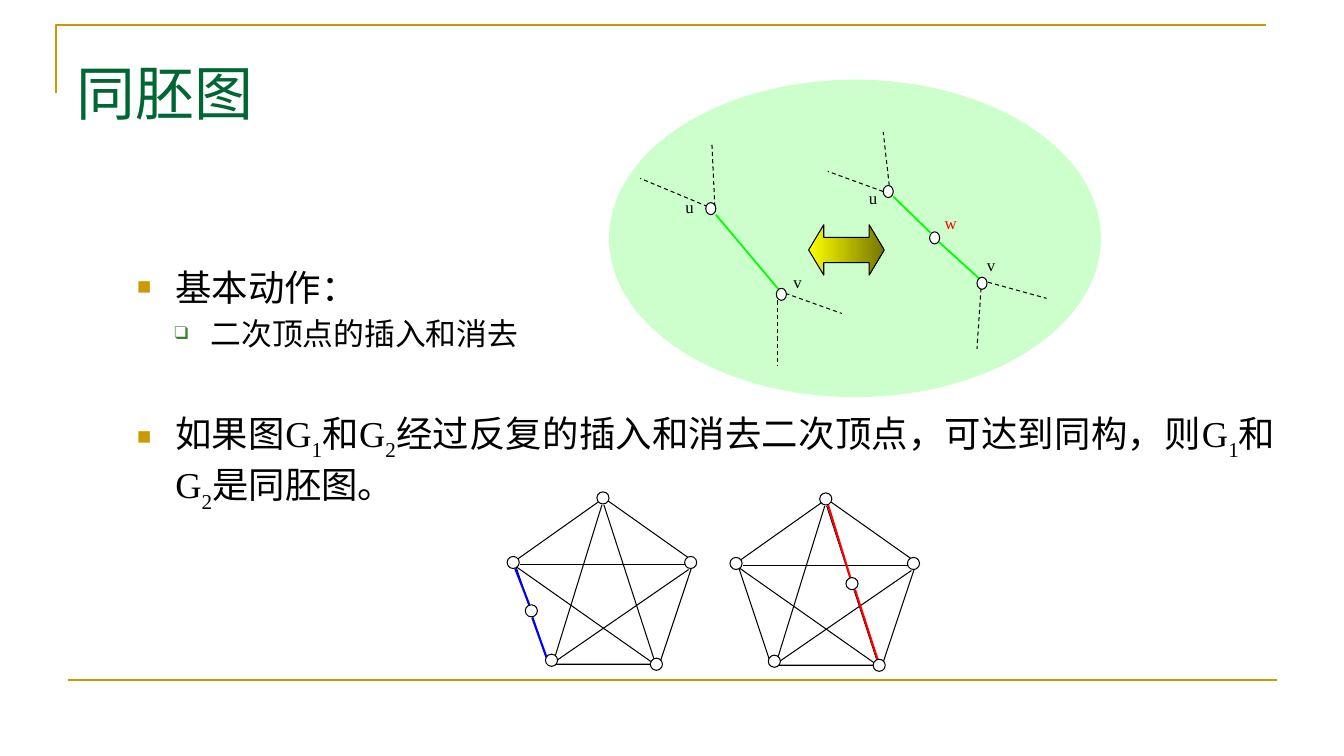
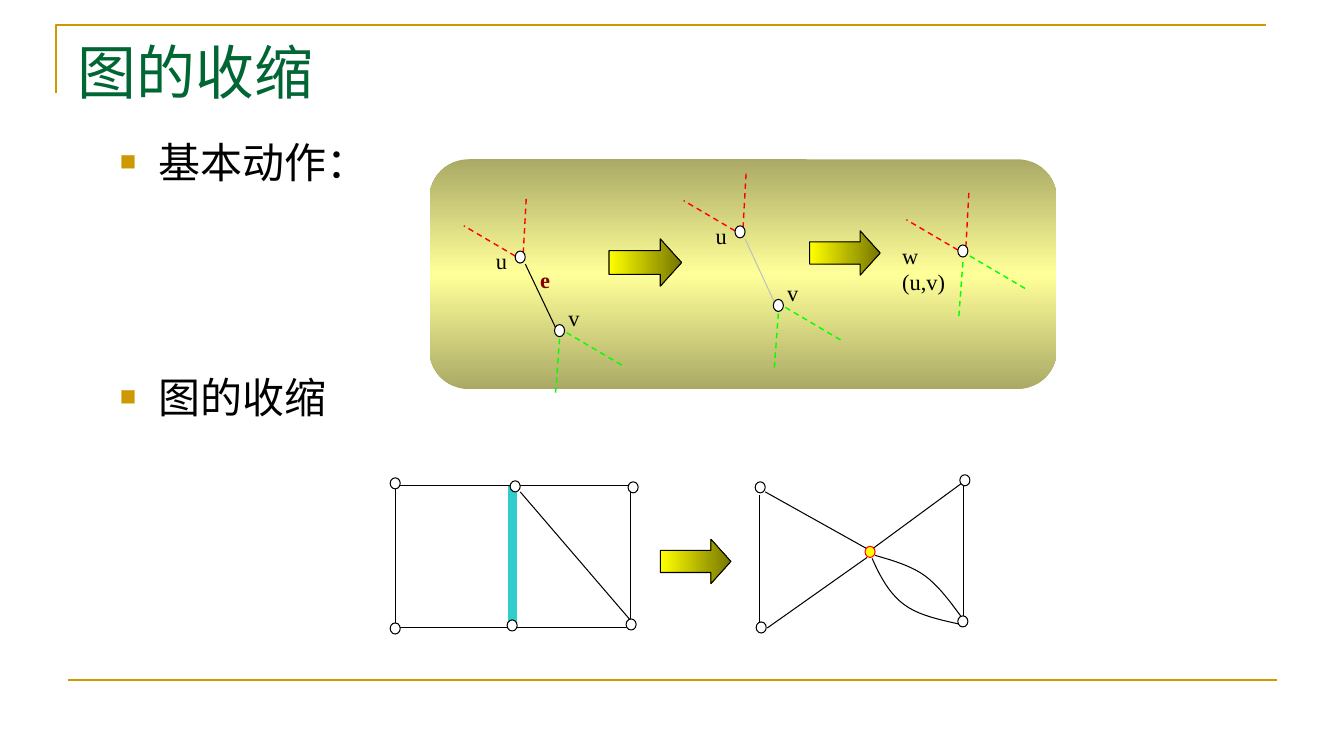
from copy import deepcopy

from lxml.etree import SubElement
from pptx import Presentation
from pptx.dml.color import RGBColor
from pptx.enum.dml import MSO_LINE
from pptx.enum.shapes import MSO_CONNECTOR, MSO_SHAPE
from pptx.enum.text import MSO_ANCHOR, MSO_AUTO_SIZE, PP_ALIGN
from pptx.oxml.ns import qn
from pptx.util import Inches, Pt

FONT = "Times New Roman"
BLACK, WHITE, RED, LIME, BLUE = "000000", "FFFFFF", "FF0000", "00FF00", "0000FF"
GOLD, GREEN = "CC9900", "006633"
ARROW_GRADIENT = ("FFFF00", "767600")
BULLETS = [("■", GOLD, 65, 0.38, 0.38), ("❑", "3B812F", 60, 0.73, 0.36)]


def write(paragraph, text, size, color=BLACK, bold=False, baseline=0):
    run = paragraph.add_run()
    run.text = text
    run.font.name = FONT
    run.font.size = Pt(size)
    run.font.bold = bold
    run.font.color.rgb = RGBColor.from_string(color)
    if baseline:
        run.font._element.set("baseline", str(baseline * 1000))


def paint(shape, fill=None, line=None, width=0.75, dash=False):
    properties = shape.element.spPr
    if isinstance(fill, tuple):
        shape.fill.gradient()
        stops = properties.find(qn("a:gradFill")).find(qn("a:gsLst"))
        for _ in fill[2:]:
            stops.append(deepcopy(stops[-1]))
        for i, (stop, color) in enumerate(zip(shape.fill.gradient_stops, fill)):
            stop.color.rgb = RGBColor.from_string(color)
            stop.position = i / (len(fill) - 1)
        shape.fill.gradient_angle = 0 if len(fill) == 2 else 90
    elif fill:
        shape.fill.solid()
        shape.fill.fore_color.rgb = RGBColor.from_string(fill)
    elif hasattr(shape, "fill"):
        shape.fill.background()
    if line:
        shape.line.color.rgb = RGBColor.from_string(line)
        shape.line.width = Pt(width)
        if dash:
            shape.line.dash_style = MSO_LINE.DASH
    else:
        shape.line.fill.background()
    SubElement(properties, qn("a:effectLst"))


prs = Presentation()
prs.slide_width, prs.slide_height = Inches(13.33), Inches(7.5)
layout = prs.slide_layouts[1]
homeomorphism = prs.slides.add_slide(layout)
contraction = prs.slides.add_slide(layout)

builder = homeomorphism.shapes.build_freeform(Inches(0.56), Inches(0.92), scale=1)
builder.add_line_segments([(Inches(0.56), Inches(0.25)), (Inches(12.56), Inches(0.25))], close=False)
corner = builder.convert_to_shape()
footer_rule = homeomorphism.shapes.add_connector(
    MSO_CONNECTOR.STRAIGHT, Inches(0.67), Inches(6.75), Inches(12.67), Inches(6.75))
for rule in (corner, footer_rule):
    paint(rule, line=GOLD, width=1.5)
    layout.shapes.element.append(rule.element)

contents = [
    (homeomorphism, "同胚图", (0.66, 0.51, 8.67, 1.25), (1.26, 2.58, 11.49, 4.65), PP_ALIGN.JUSTIFY, [
        (0, 26, 5.2, ["基本动作："]),
        (1, 22, 4.4, ["二次顶点的插入和消去"]),
        (0, 26, 42, ["如果图G", "1", "和G", "2", "经过反复的插入和消去二次顶点，可达到同构，则G",
                     "1", "和G", "2", "是同胚图。"]),
    ]),
    (contraction, "图的收缩", (0.67, 0.3, 12, 1.25), (1.09, 1.3, 8.41, 4.07), PP_ALIGN.LEFT, [
        (0, 30, 6, ["基本动作："]),
        (0, 30, 132, ["图的收缩"]),
    ]),
]
for slide, heading, title_box, body_box, alignment, points in contents:
    title, body = slide.placeholders
    for holder, box in ((title, title_box), (body, body_box)):
        holder.left, holder.top, holder.width, holder.height = map(Inches, box)
        holder.text_frame.auto_size = MSO_AUTO_SIZE.NONE
        holder.text_frame.vertical_anchor = MSO_ANCHOR.TOP
    title.text_frame.paragraphs[0].alignment = PP_ALIGN.LEFT
    write(title.text_frame.paragraphs[0], heading, 42, GREEN)
    for i, (level, size, space, pieces) in enumerate(points):
        point = body.text_frame.add_paragraph() if i else body.text_frame.paragraphs[0]
        point.level = level
        point.alignment = alignment
        point.space_before = Pt(space)
        mark, color, percent, margin, hanging = BULLETS[level]
        settings = point._p.get_or_add_pPr()
        settings.set("marL", str(Inches(margin)))
        settings.set("indent", str(-Inches(hanging)))
        SubElement(SubElement(settings, qn("a:buClr")), qn("a:srgbClr"), val=color)
        SubElement(settings, qn("a:buSzPct"), val=str(percent * 1000))
        SubElement(settings, qn("a:buFont"), typeface=FONT)
        SubElement(settings, qn("a:buChar"), char=mark)
        for piece in pieces:
            write(point, piece, size, baseline=-30 if piece.isdigit() else 0)

insert_nodes = [(7, 2.01), (7.7, 2.86), (9.22, 2.3), (9.69, 2.75), (8.76, 1.84)]
insert_nodes = [(x, y, 0.1, 0.12, WHITE, BLACK) for x, y in insert_nodes]
insert_edges = [(*ends, LIME, 1.25, False) for ends in (
    (7.1, 2.13, 7.73, 2.88), (8.86, 1.95, 9.23, 2.31), (9.3, 2.39, 9.73, 2.78))]
insert_edges += [(*ends, BLACK, 0.75, True) for ends in (
    (7.02, 2.05, 6.35, 1.77), (7.09, 2.05, 7.06, 1.41),
    (7.71, 2.98, 7.71, 3.63), (7.79, 2.91, 8.35, 3.11),
    (8.76, 1.9, 8.21, 1.7), (8.82, 1.84, 8.76, 1.31),
    (9.73, 2.86, 9.69, 3.46), (9.8, 2.8, 10.38, 2.96))]
insert_labels = [("u", 8.52, 1.81, BLACK), ("u", 6.7, 1.9, BLACK), ("v", 7.77, 2.65, BLACK),
                 ("v", 9.69, 2.48, BLACK), ("w", 9.27, 2.06, RED)]

corners = [(5.92, 4.88), (5.03, 5.52), (6.79, 5.52), (5.41, 6.49), (6.45, 6.53)]
diagonals = [(5.97, 5.01, 5.5, 6.53), (5.16, 5.6, 6.8, 5.6), (5.13, 5.63, 6.48, 6.58),
             (5.99, 5.01, 6.5, 6.58), (5.51, 6.56, 6.83, 5.65)]
pentagons = []
for dx, dy, inserted, color, halves in (
    (0, 0, (5.21, 6), BLUE, [(5.11, 5.64, 5.25, 6), (5.28, 6.13, 5.42, 6.52)]),
    (2.21, 0.01, (8.39, 5.73), RED, [(8.21, 5, 8.44, 5.75), (8.48, 5.85, 8.71, 6.56)]),
):
    pentagons.append((MSO_SHAPE.REGULAR_PENTAGON, (5.1 + dx, 4.94 + dy, 1.78, 1.65), WHITE, BLACK))
    vertices = [(x + dx, y + dy) for x, y in corners] + [inserted]
    insert_nodes += [(x, y, 0.12, 0.12, WHITE, BLACK) for x, y in vertices]
    insert_edges += [(a + dx, b + dy, c + dx, d + dy, BLACK, 0.75, False) for a, b, c, d in diagonals]
    insert_edges += [(*half, color, 1.5, False) for half in halves]

merge_nodes = [(x, y, 0.1, 0.11, WHITE, BLACK) for x, y in (
    (3.87, 4.74), (3.87, 6.18), (5.06, 4.77), (5.03, 6.15), (6.23, 4.78), (6.21, 6.14),
    (7.49, 4.78), (7.5, 6.17), (9.52, 4.71), (9.5, 6.11))]
merge_nodes.append((8.58, 5.42, 0.1, 0.11, "FFFF00", RED))
merge_edges = [(*ends, BLACK, 0.75, False) for ends in (
    (5.16, 4.88, 6.25, 6.15), (7.53, 4.91, 7.53, 6.18), (7.59, 4.88, 8.61, 5.45),
    (7.61, 6.23, 8.6, 5.53), (8.66, 5.44, 9.53, 4.8), (9.56, 4.8, 9.56, 6.14))]
merge_labels = [("e", 5.26, 2.59, "800000"), ("w\n(u,v)", 8.85, 2.37, BLACK)]
for ux, uy, vx, vy, link in ((5.11, 2.49, 5.5, 3.22, BLACK), (7.29, 2.24, 7.67, 2.97, "C0C0C0"),
                             (9.5, 2.43, 9.5, 2.46, None)):
    merge_edges += [
        (ux + 0.08, uy + 0.02, ux + 0.11, uy - 0.53, RED, 1, True),
        (ux, uy + 0.05, ux - 0.51, uy - 0.25, RED, 1, True),
        (vx + 0.05, vy + 0.14, vx + 0.01, vy + 0.68, LIME, 1, True),
        (vx + 0.12, vy + 0.08, vx + 0.68, vy + 0.41, LIME, 1, True)]
    merge_nodes.append((ux, uy, 0.1, 0.12, WHITE, BLACK))
    if link:
        merge_nodes.append((vx, vy, 0.1, 0.12, WHITE, BLACK))
        merge_edges.append((ux + 0.1, uy + 0.13, vx + 0.02, vy + 0.05, link, 0.75, False))
        merge_labels += [("u", ux - 0.29, uy - 0.09, BLACK), ("v", vx + 0.04, vy - 0.25, BLACK)]

insert_panels = [(MSO_SHAPE.OVAL, (6.04, 0.79, 4.88, 3.15), "CCFFCC", None), *pentagons]
insert_panels.append((MSO_SHAPE.LEFT_RIGHT_ARROW, (8.02, 2.23, 0.75, 0.5), ARROW_GRADIENT, BLACK, 0.5, 0.3))
merge_panels = [
    (MSO_SHAPE.ROUNDED_RECTANGLE, (4.26, 1.58, 6.22, 2.28), ("AAAA66", "FFFF99", "AAAA66"), None, 0.17)]
merge_panels += [(MSO_SHAPE.RIGHT_ARROW, box, ARROW_GRADIENT, BLACK, 0.5, 0.45) for box in (
    (6.04, 2.37, 0.72, 0.47), (8.03, 2.29, 0.7, 0.44), (6.55, 5.35, 0.7, 0.44))]

square = contraction.shapes.add_shape(MSO_SHAPE.RECTANGLE, *map(Inches, (3.92, 4.82, 2.33, 1.41)))
paint(square, WHITE, BLACK)
contracted = contraction.shapes.add_connector(
    MSO_CONNECTOR.STRAIGHT, *map(Inches, (5.09, 4.82, 5.09, 6.23)))
contracted.begin_connect(square, 0)
contracted.end_connect(square, 2)
paint(contracted, line="33CCCC", width=6)

parallel_edges = [
    [[(8.68, 5.51), (8.85, 5.56), (9.03, 5.61), (9.17, 5.71)],
     [(9.17, 5.71), (9.32, 5.82), (9.43, 5.98), (9.55, 6.14)]],
    [[(8.65, 5.54), (8.73, 5.72), (8.82, 5.89), (8.97, 6)],
     [(8.97, 6), (9.12, 6.11), (9.33, 6.15), (9.55, 6.2)]],
]
for arcs in parallel_edges:
    trail = []
    for arc in arcs:
        for t in [step / 10 for step in range(11)]:
            weights = ((1 - t) ** 3, 3 * t * (1 - t) ** 2, 3 * t * t * (1 - t), t ** 3)
            trail.append(tuple(Inches(sum(w * p[axis] for w, p in zip(weights, arc))) for axis in (0, 1)))
    builder = contraction.shapes.build_freeform(*trail[0], scale=1)
    builder.add_line_segments(trail[1:], close=False)
    paint(builder.convert_to_shape(), line=BLACK)

for slide, panels, edges, nodes, labels, label_size in (
    (homeomorphism, insert_panels, insert_edges, insert_nodes, insert_labels, 12),
    (contraction, merge_panels, merge_edges, merge_nodes, merge_labels, 16),
):
    for preset, box, fill, line, *adjustments in panels:
        panel = slide.shapes.add_shape(preset, *map(Inches, box))
        for i, value in enumerate(adjustments):
            panel.adjustments[i] = value
        paint(panel, fill, line)
    for *ends, color, width, dash in edges:
        edge = slide.shapes.add_connector(MSO_CONNECTOR.STRAIGHT, *map(Inches, ends))
        paint(edge, line=color, width=width, dash=dash)
    for *box, fill, line in nodes:
        paint(slide.shapes.add_shape(MSO_SHAPE.OVAL, *map(Inches, box)), fill, line)
    for text, x, y, color in labels:
        frame = slide.shapes.add_textbox(*map(Inches, (x, y, 0.73, 0.57))).text_frame
        frame.word_wrap = True
        for i, row in enumerate(text.split("\n")):
            label = frame.add_paragraph() if i else frame.paragraphs[0]
            label.line_spacing = 0.96 if "\n" in text else 1.0
            write(label, row, label_size, color, bold=text == "e")

prs.save("out.pptx")
